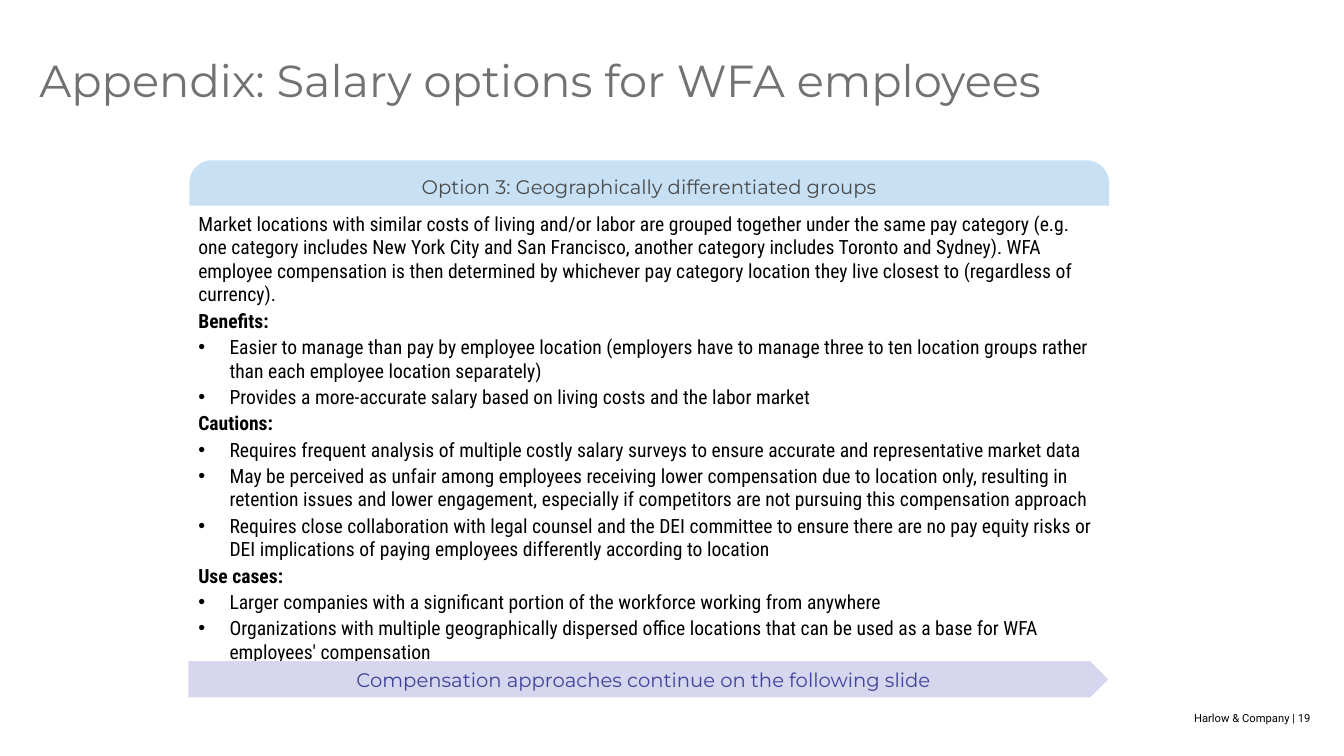
from dataclasses import dataclass

from lxml import etree
from pptx import Presentation
from pptx.dml.color import RGBColor
from pptx.enum.shapes import MSO_SHAPE
from pptx.enum.text import MSO_ANCHOR, PP_ALIGN
from pptx.oxml.ns import qn
from pptx.util import Inches, Pt

LEFT, CENTER, RIGHT = PP_ALIGN.LEFT, PP_ALIGN.CENTER, PP_ALIGN.RIGHT
TOP, MIDDLE = MSO_ANCHOR.TOP, MSO_ANCHOR.MIDDLE
ROUNDED_TOP = MSO_SHAPE.ROUND_2_SAME_RECTANGLE
ARROW_BAR = MSO_SHAPE.PENTAGON
BULLET_INDENT = 0.31


@dataclass
class Box:
    left: float
    top: float
    width: float
    height: float


@dataclass
class TextStyle:
    font: str
    size: float
    color: str
    align: int = LEFT
    line_spacing: float = 1.0
    space_before: float = 0


@dataclass
class Label:
    box: Box
    text: str
    style: TextStyle


@dataclass
class Banner(Label):
    kind: int
    fill: str
    adjustments: tuple = ()


@dataclass
class Section:
    heading: str
    bullets: list


LABELS = [
    Label(Box(10.74, 7.04, 2.27, 0.2), "Harlow & Company | 19",
          TextStyle("Roboto", 8, "000000", RIGHT, 1.1)),
    Label(Box(0.39, 0.58, 12.16, 1.24), "Appendix: Salary options for WFA employees",
          TextStyle("Montserrat", 32, "717272", LEFT, 0.9)),
]

BANNERS = [
    Banner(Box(1.88, 1.59, 9.13, 0.45), "Option 3: Geographically differentiated groups",
           TextStyle("Montserrat", 14, "494A4A", CENTER), ROUNDED_TOP, "C7E0F4", (0.5, 0)),
    Banner(Box(1.87, 6.56, 9.13, 0.36), "Compensation approaches continue on the following slide",
           TextStyle("Montserrat", 14, "414299", CENTER), ARROW_BAR, "D6D6EE"),
]

BODY_BOX = Box(1.87, 2.05, 9.13, 4.29)
BODY_STYLE = TextStyle("Roboto Condensed", 14, "000000", space_before=2)
INTRODUCTION = (
    "Market locations with similar costs of living and/or labor are grouped together under "
    "the same pay category (e.g. one category includes New York City and San Francisco, "
    "another category includes Toronto and Sydney). WFA employee compensation is then "
    "determined by whichever pay category location they live closest to (regardless of currency)."
)
SECTIONS = [
    Section("Benefits:", [
        "Easier to manage than pay by employee location (employers have to manage three to ten "
        "location groups rather than each employee location separately)",
        "Provides a more-accurate salary based on living costs and the labor market",
    ]),
    Section("Cautions:", [
        "Requires frequent analysis of multiple costly salary surveys to ensure accurate and "
        "representative market data",
        "May be perceived as unfair among employees receiving lower compensation due to location "
        "only, resulting in retention issues and lower engagement, especially if competitors are "
        "not pursuing this compensation approach",
        "Requires close collaboration with legal counsel and the DEI committee to ensure there are "
        "no pay equity risks or DEI implications of paying employees differently according to location",
    ]),
    Section("Use cases:", [
        "Larger companies with a significant portion of the workforce working from anywhere",
        "Organizations with multiple geographically dispersed office locations that can be used as "
        "a base for WFA employees' compensation",
    ]),
]


def rgb(color: str) -> RGBColor:
    return RGBColor.from_string(color)


def place(box: Box) -> tuple:
    return Inches(box.left), Inches(box.top), Inches(box.width), Inches(box.height)


def write(paragraph, text: str, style: TextStyle, bold: bool = False) -> None:
    paragraph.text = text
    paragraph.alignment = style.align
    paragraph.line_spacing = style.line_spacing
    paragraph.space_before = Pt(style.space_before)
    for run in paragraph.runs:
        run.font.name = style.font
        run.font.size = Pt(style.size)
        run.font.bold = bold
        run.font.color.rgb = rgb(style.color)


def add_bullet(paragraph) -> None:
    properties = paragraph._p.get_or_add_pPr()
    properties.set("marL", str(Inches(BULLET_INDENT)))
    properties.set("indent", str(-Inches(BULLET_INDENT)))
    etree.SubElement(properties, qn("a:buFont")).set("typeface", "Arial")
    etree.SubElement(properties, qn("a:buChar")).set("char", "•")


def add_text_frame(slide, box: Box):
    text_frame = slide.shapes.add_textbox(*place(box)).text_frame
    text_frame.word_wrap = True
    text_frame.vertical_anchor = TOP
    return text_frame


def add_label(slide, label: Label) -> None:
    text_frame = add_text_frame(slide, label.box)
    text_frame.margin_left = text_frame.margin_right = 0
    text_frame.margin_top = text_frame.margin_bottom = 0
    write(text_frame.paragraphs[0], label.text, label.style)


def add_banner(slide, banner: Banner) -> None:
    shape = slide.shapes.add_shape(banner.kind, *place(banner.box))
    shape.shadow.inherit = False
    shape.fill.solid()
    shape.fill.fore_color.rgb = rgb(banner.fill)
    shape.line.fill.background()
    for index, value in enumerate(banner.adjustments):
        shape.adjustments[index] = value
    shape.text_frame.word_wrap = True
    shape.text_frame.vertical_anchor = MIDDLE
    write(shape.text_frame.paragraphs[0], banner.text, banner.style)


def add_body(slide) -> None:
    text_frame = add_text_frame(slide, BODY_BOX)
    write(text_frame.paragraphs[0], INTRODUCTION, BODY_STYLE)
    for section in SECTIONS:
        write(text_frame.add_paragraph(), section.heading, BODY_STYLE, bold=True)
        for bullet in section.bullets:
            paragraph = text_frame.add_paragraph()
            write(paragraph, bullet, BODY_STYLE)
            add_bullet(paragraph)


def main() -> None:
    presentation = Presentation()
    presentation.slide_width = Inches(13.34)
    presentation.slide_height = Inches(7.5)
    slide = presentation.slides.add_slide(presentation.slide_layouts[6])

    # Footer and title
    for label in LABELS:
        add_label(slide, label)

    # Option text between its two banners
    header, continuation = BANNERS
    add_banner(slide, header)
    add_body(slide)
    add_banner(slide, continuation)

    presentation.save("out.pptx")


if __name__ == "__main__":
    main()
